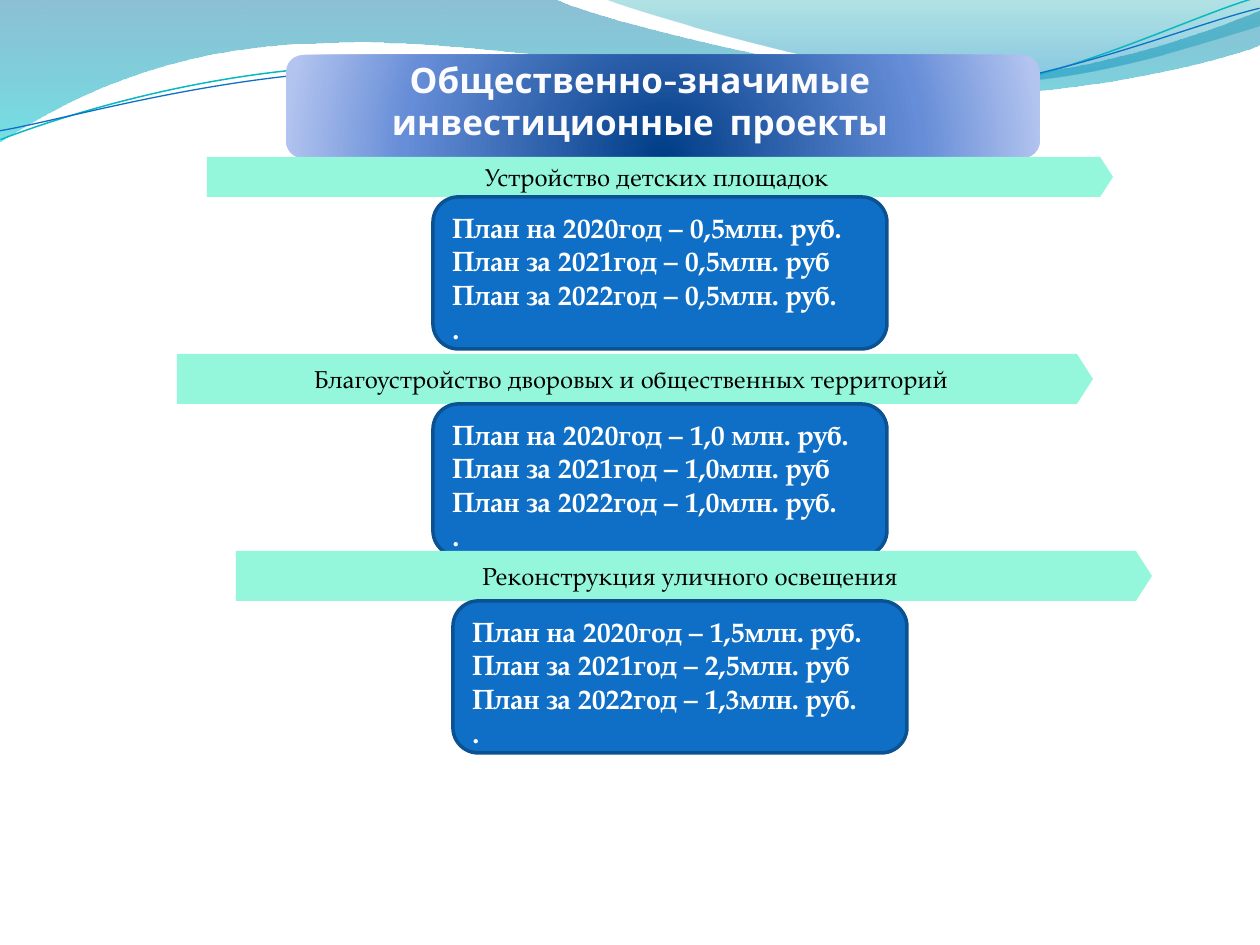
from dataclasses import dataclass

import pptx
import pptx.dml.color
import pptx.enum.shapes
import pptx.enum.text
import pptx.oxml.ns
import pptx.util
from lxml import etree

SCALE = 914400 / 126  # EMU per px
SERIF, SANS = "TeX Gyre Pagella", "Cabin"
SHAPE = pptx.enum.shapes.MSO_SHAPE
ALIGN = pptx.enum.text.PP_ALIGN
ANCHOR = pptx.enum.text.MSO_ANCHOR
qn = pptx.oxml.ns.qn


@dataclass
class Project:
    name: str
    arrow: tuple[int, int, int, int]
    card: tuple[int, int]
    plans: tuple[str, str, str]


@dataclass
class Wave:
    start: tuple[int, int]
    segments: list  # one point for a line, three for a Bezier curve
    stops: tuple = ()  # position, colour, opacity
    line: str = ""
    weight: float = 0
    rotation: float = 0


WAVES = [
    Wave((0, 0), [
        [(554, -1)],
        [(600, 21), (837, 79), (955, 79)],
        [(1075, 79), (1207, 33), (1260, 11)],
        [(1261, 45)],
        [(1239, 55), (1096, 96), (940, 95)],
        [(784, 95), (481, 35), (324, 43)],
        [(163, 45), (58, 105), (-1, 142)],
        [(0, 0)],
    ], stops=((0, "0074A1", 45), (100, "00C6CF", 55))),
    Wave((604, -1), [
        [(641, 14), (859, 78), (969, 82)],
        [(1079, 87), (1211, 40), (1260, 26)],
        [(1260, 0)],
        [(604, -1)],
    ], stops=((0, "00A1A9", 30), (80, "008BBF", 45))),
    Wave((-2, 110), [
        [(58, 90), (199, 52), (350, 53)],
        [(499, 53), (745, 118), (896, 114)],
        [(1049, 109), (1184, 45), (1260, 27)],
    ], line="0AB8BF", weight=0.85, rotation=357.3),
    Wave((-2, 101), [
        [(58, 94), (208, 57), (358, 58)],
        [(509, 58), (751, 112), (902, 108)],
        [(1052, 104), (1188, 52), (1262, 38)],
    ], line="0F6FC6", weight=0.75, rotation=357.3),
]

PROJECTS = [
    Project("Устройство детских площадок", (207, 157, 906, 40), (433, 197),
            ("на 2020год – 0,5млн. руб.", "за 2021год – 0,5млн. руб", "за 2022год – 0,5млн. руб.")),
    Project("Благоустройство дворовых и общественных территорий", (177, 354, 916, 50), (433, 404),
            ("на 2020год – 1,0 млн. руб.", "за 2021год – 1,0млн. руб", "за 2022год – 1,0млн. руб.")),
    Project("Реконструкция уличного освещения", (236, 551, 916, 50), (453, 601),
            ("на 2020год – 1,5млн. руб.", "за 2021год – 2,5млн. руб", "за 2022год – 1,3млн. руб.")),
]


def px(n: float) -> int:
    return round(n * SCALE)


def rgb(value: str) -> pptx.dml.color.RGBColor:
    return pptx.dml.color.RGBColor.from_string(value)


def set_text(tf, text: str, *, font: str, size: int, color: str, bold=False,
             align=ALIGN.LEFT, anchor=ANCHOR.TOP, insets=(13, 0, 13, 0)) -> None:
    tf.word_wrap = True
    tf.auto_size = pptx.enum.text.MSO_AUTO_SIZE.NONE
    tf.vertical_anchor = anchor
    tf.margin_left, tf.margin_top, tf.margin_right, tf.margin_bottom = map(px, insets)
    tf.text = text
    for p in tf.paragraphs:
        p.alignment = align
        for r in p.runs:
            r.font.name, r.font.size, r.font.bold = font, pptx.util.Pt(size), bold
            r.font.color.rgb = rgb(color)


def set_gradient(sp, stops: tuple, focus: dict | None = None) -> None:
    """Fill downwards, or from a focus rectangle outwards."""
    sp.fill.gradient()
    grad = sp.element.spPr.find(qn("a:gradFill"))
    for child in list(grad):
        grad.remove(child)
    stop_list = etree.SubElement(grad, qn("a:gsLst"))
    for pos, color, opacity in stops:
        stop = etree.SubElement(stop_list, qn("a:gs"), pos=str(pos * 1000))
        clr = etree.SubElement(stop, qn("a:srgbClr"), val=color)
        if opacity < 100:
            etree.SubElement(clr, qn("a:alpha"), val=str(opacity * 1000))
    if focus:
        circle = etree.SubElement(grad, qn("a:path"), path="circle")
        etree.SubElement(circle, qn("a:fillToRect"),
                         {side: str(v * 1000) for side, v in focus.items()})
    else:
        etree.SubElement(grad, qn("a:lin"), ang="5400000", scaled="0")


def add_shape(s, kind, x: int, y: int, w: int, h: int, fill: str = ""):
    sp = s.shapes.add_shape(kind, px(x), px(y), px(w), px(h))
    sp.shadow.inherit = False
    sp.line.fill.background()
    if fill:
        sp.fill.solid()
        sp.fill.fore_color.rgb = rgb(fill)
    return sp


def bend_segments(sp, segments: list) -> None:
    """Join each three points of a curved segment into one Bezier curve."""
    lines = iter(list(sp.element.spPr.iter(qn("a:lnTo"))))
    for segment in segments:
        first, *others = [next(lines) for _ in segment]
        if others:
            first.tag = qn("a:cubicBezTo")
            for line in others:
                first.append(line[0])
                line.getparent().remove(line)


def add_wave(s, wave: Wave) -> None:
    builder = s.shapes.build_freeform(*map(px, wave.start))
    points = [(px(x), px(y)) for segment in wave.segments for x, y in segment]
    builder.add_line_segments(points, close=bool(wave.stops))
    sp = builder.convert_to_shape()
    bend_segments(sp, wave.segments)
    sp.shadow.inherit = False
    sp.rotation = wave.rotation
    if wave.stops:
        set_gradient(sp, wave.stops)
        sp.line.fill.background()
    else:
        sp.fill.background()
        sp.line.color.rgb = rgb(wave.line)
        sp.line.width = pptx.util.Pt(wave.weight)


def add_project(s, project: Project) -> None:
    arrow = add_shape(s, SHAPE.PENTAGON, *project.arrow, fill="94F7DC")
    arrow.adjustments[0] = 0.32
    set_text(arrow.text_frame, project.name, font=SERIF, size=14, color="000000",
             align=ALIGN.CENTER, anchor=ANCHOR.MIDDLE)

    card = add_shape(s, SHAPE.ROUNDED_RECTANGLE, *project.card, 454, 152, fill="0F6FC6")
    card.line.color.rgb = rgb("0B5292")
    card.line.width = pptx.util.Pt(2)
    lines = [f"План {plan}" for plan in project.plans] + ["."]
    set_text(card.text_frame, "\n".join(lines), font=SERIF, size=16, color="FFFFFF",
             bold=True, insets=(12, 6, 12, 0))


def main() -> None:
    prs = pptx.Presentation()
    prs.slide_width, prs.slide_height = px(1260), px(945)
    s = prs.slides.add_slide(prs.slide_layouts[5])

    # Waves along the top edge
    for wave in WAVES:
        add_wave(s, wave)

    # Title on its gradient banner
    banner = add_shape(s, SHAPE.ROUNDED_RECTANGLE, 286, 55, 754, 103)
    set_gradient(banner, ((0, "003D87", 100), (68, "668DD7", 100), (100, "B3C4EF", 100)),
                 focus={"l": 50, "t": 130, "r": 50, "b": -30})
    title = s.shapes.title
    title.left, title.top, title.width, title.height = map(px, (284, 52, 712, 97))
    set_text(title.text_frame, "Общественно-значимые инвестиционные  проекты", font=SANS,
             size=20, color="FCFCFE", bold=True, align=ALIGN.CENTER, insets=(13, 6, 13, 6))
    banner.element.addnext(title.element)

    # Project arrows with their plan cards
    for project in PROJECTS:
        add_project(s, project)

    prs.save("out.pptx")


if __name__ == "__main__":
    main()
